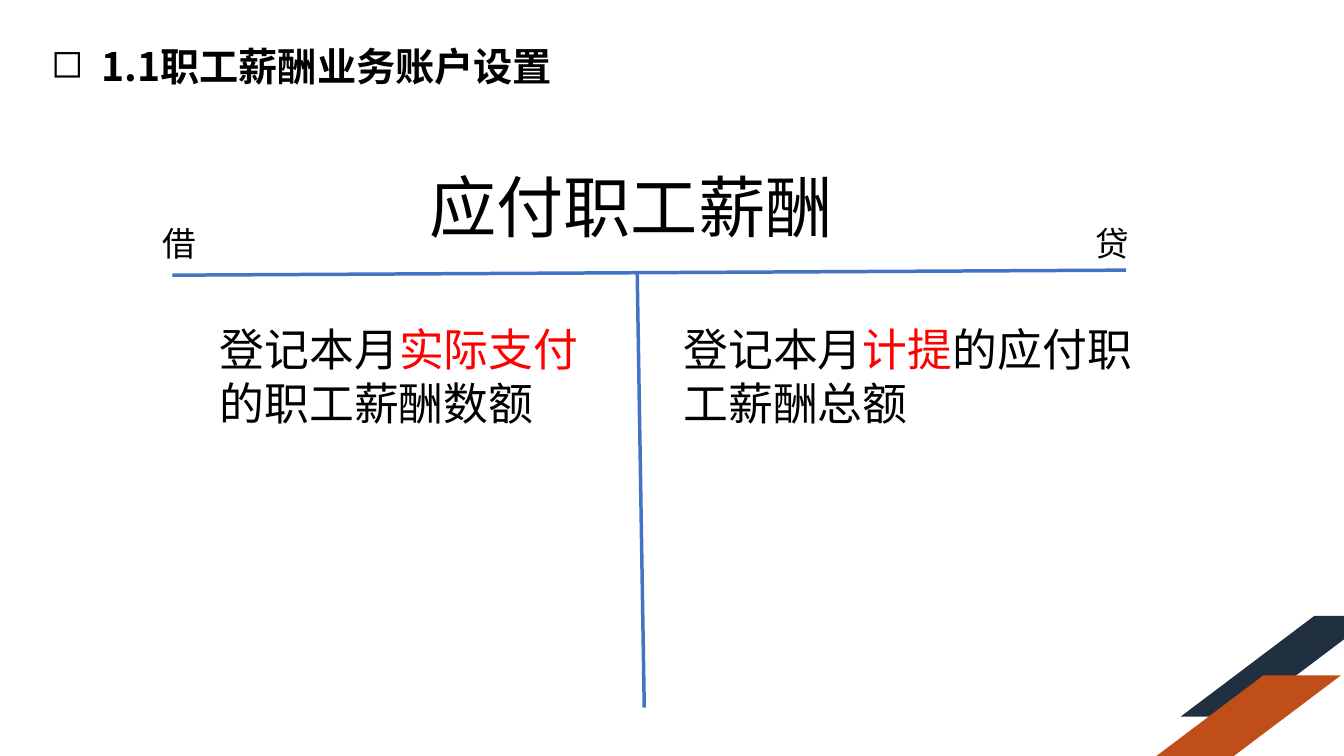
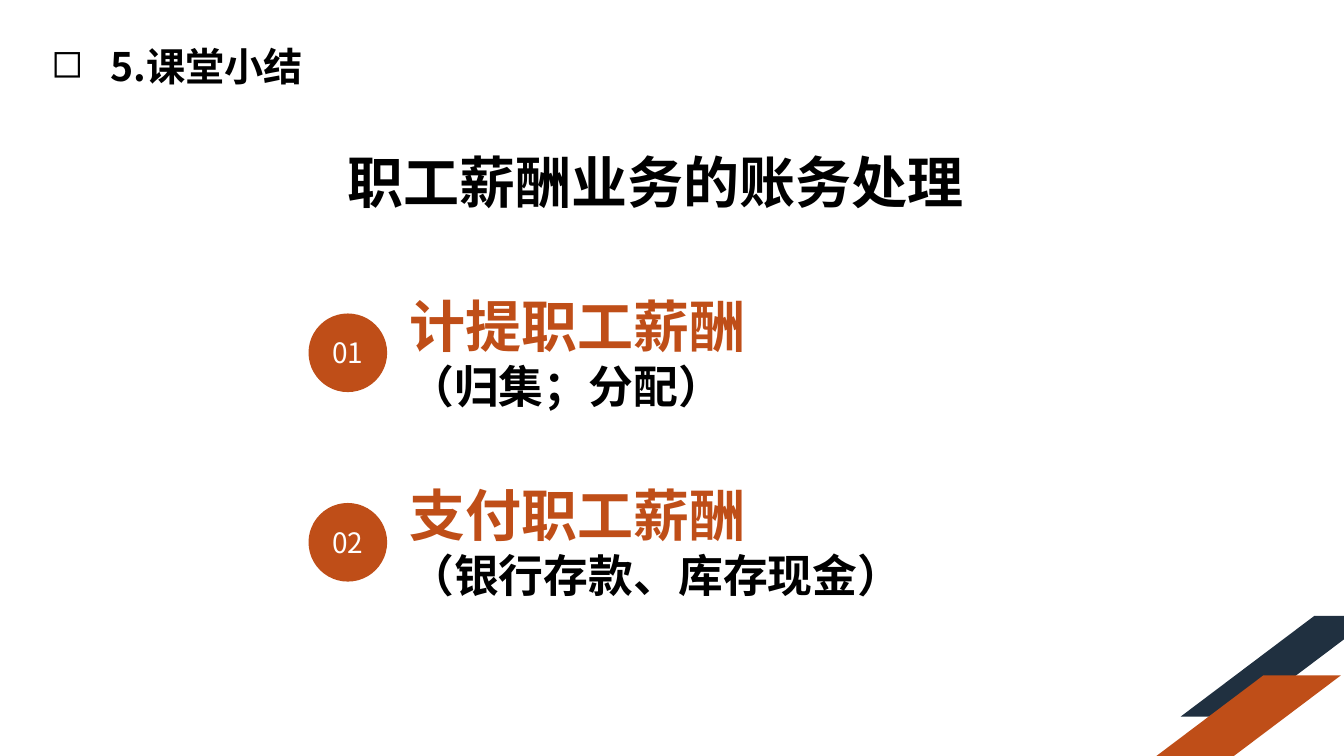
from lxml import etree
from pptx import Presentation
from pptx.dml.color import RGBColor
from pptx.enum.shapes import MSO_CONNECTOR, MSO_SHAPE
from pptx.enum.text import MSO_ANCHOR, MSO_AUTO_SIZE, PP_ALIGN
from pptx.oxml.ns import qn
from pptx.util import Inches, Pt

FONT = "Noto Sans CJK SC"
COLORS = {
    "text": "000000",
    "highlight": "FF0000",
    "navy": "203040",
    "orange": "BF4E18",
    "blue": "4472C4",
    "white": "FFFFFF",
}


def color(name):
    return RGBColor.from_string(COLORS[name])


def add_run(paragraph, text, size, color_name="text", bold=False):
    run = paragraph.add_run()
    run.text = text
    font = run.font
    font.name, font.size, font.bold = FONT, Pt(size), bold
    font.color.rgb = color(color_name)
    east_asian = etree.SubElement(run._r.get_or_add_rPr(), qn("a:ea"))
    east_asian.set("typeface", FONT)


def add_textbox(slide, left, top, width, height, paragraphs, margin=None):
    """Add a text box; each paragraph is a list of add_run argument tuples."""
    box = slide.shapes.add_textbox(
        Inches(left), Inches(top), Inches(width), Inches(height))
    frame = box.text_frame
    frame.word_wrap = True
    frame.auto_size = MSO_AUTO_SIZE.SHAPE_TO_FIT_TEXT
    if margin is not None:
        frame.margin_left = frame.margin_right = Inches(margin)
        frame.margin_top = frame.margin_bottom = Inches(margin)
    for index, runs in enumerate(paragraphs):
        paragraph = frame.add_paragraph() if index else frame.paragraphs[0]
        for run in runs:
            add_run(paragraph, *run)
    return box


def add_filled_shape(slide, kind, left, top, width, height, fill):
    shape = slide.shapes.add_shape(
        kind, Inches(left), Inches(top), Inches(width), Inches(height))
    shape.shadow.inherit = False
    shape.fill.solid()
    shape.fill.fore_color.rgb = color(fill)
    shape.line.fill.background()
    return shape


def add_line(slide, start_x, start_y, end_x, end_y):
    line = slide.shapes.add_connector(
        MSO_CONNECTOR.STRAIGHT, Inches(start_x), Inches(start_y),
        Inches(end_x), Inches(end_y))
    line.line.color.rgb = color("blue")
    line.line.width = Pt(2.5)
    etree.SubElement(line.element.spPr, qn("a:effectLst"))


def add_corner_stripes(layout, slide):
    """Draw the stripes on the slide, then move them to the shared layout."""
    for placeholder in list(layout.placeholders):
        layout.shapes.element.remove(placeholder.element)
    for left, top, width, height, fill in (
            (11.71, 6.11, 1.93, 1, "navy"),
            (11.47, 6.7, 1.83, 0.8, "orange")):
        stripe = add_filled_shape(
            slide, MSO_SHAPE.PARALLELOGRAM, left, top, width, height, fill)
        stripe.adjustments[0] = 1.327
        layout.shapes.element.append(stripe.element)


def add_title(slide, text):
    box = add_textbox(slide, 0.41, 0.37, 7.64, 0.57, [[(text, 28, "text", True)]])
    properties = box.text_frame.paragraphs[0]._p.get_or_add_pPr()
    properties.set("marL", str(Inches(0.5)))
    properties.set("indent", str(Inches(-0.5)))
    etree.SubElement(properties, qn("a:buChar")).set("char", "◻")


def add_t_account(slide, left, top):
    add_line(slide, left + 0.2, top + 1.14, left + 9.66, top + 1.09)
    add_line(slide, left + 4.81, top + 1.11, left + 4.88, top + 5.43)
    add_textbox(slide, left + 2.65, top, 5.59, 0.91, [[("应付职工薪酬", 48)]])
    for label, offset in (("借", 0), ("贷", 9.26)):
        add_textbox(slide, left + offset, top + 0.57, 0.75, 0.5, [[(label, 24)]])
    for offset, width, highlight, ending in (
            (0.57, 4.09, "实际支付", "的职工薪酬数额"),
            (5.17, 4.69, "计提", "的应付职工薪酬总额")):
        runs = [("登记本月", 32), (highlight, 32, "highlight"), (ending, 32)]
        add_textbox(slide, left + offset, top + 1.55, width, 1.18, [runs])


def add_summary_item(slide, left, top, number, heading, detail):
    box = add_textbox(
        slide, left + 1, top, 7.66, 1.21,
        [[(heading, 40, "orange", True)], [(detail, 32, "text", True)]], margin=0)
    for paragraph in box.text_frame.paragraphs:
        paragraph.alignment = PP_ALIGN.JUSTIFY
    badge = add_filled_shape(
        slide, MSO_SHAPE.OVAL, left, top + 0.22, 0.78, 0.78, "orange")
    frame = badge.text_frame
    frame.vertical_anchor = MSO_ANCHOR.MIDDLE
    frame.paragraphs[0].alignment = PP_ALIGN.CENTER
    add_run(frame.paragraphs[0], number, 20, "white")


def build_account_slide(slide):
    add_title(slide, "1.1职工薪酬业务账户设置")
    add_t_account(slide, 1.51, 1.59)


def build_summary_slide(slide):
    add_title(slide, " 5.课堂小结")
    add_textbox(slide, 3.35, 1.41, 6.67, 0.77,
                [[("职工薪酬业务的账务处理", 40, "text", True)]])
    items = (("计提职工薪酬", "（归集；分配）"),
             ("支付职工薪酬", "（银行存款、库存现金）"))
    for index, (heading, detail) in enumerate(items):
        add_summary_item(slide, 3.06, 2.89 + 1.88 * index,
                         f"{index + 1:02}", heading, detail)


def main():
    presentation = Presentation()
    presentation.slide_width = Inches(13.33)
    presentation.slide_height = Inches(7.5)
    blank = presentation.slide_layouts[6]
    account_slide = presentation.slides.add_slide(blank)
    summary_slide = presentation.slides.add_slide(blank)
    add_corner_stripes(blank, account_slide)
    build_account_slide(account_slide)
    build_summary_slide(summary_slide)
    presentation.save("out.pptx")


if __name__ == "__main__":
    main()
